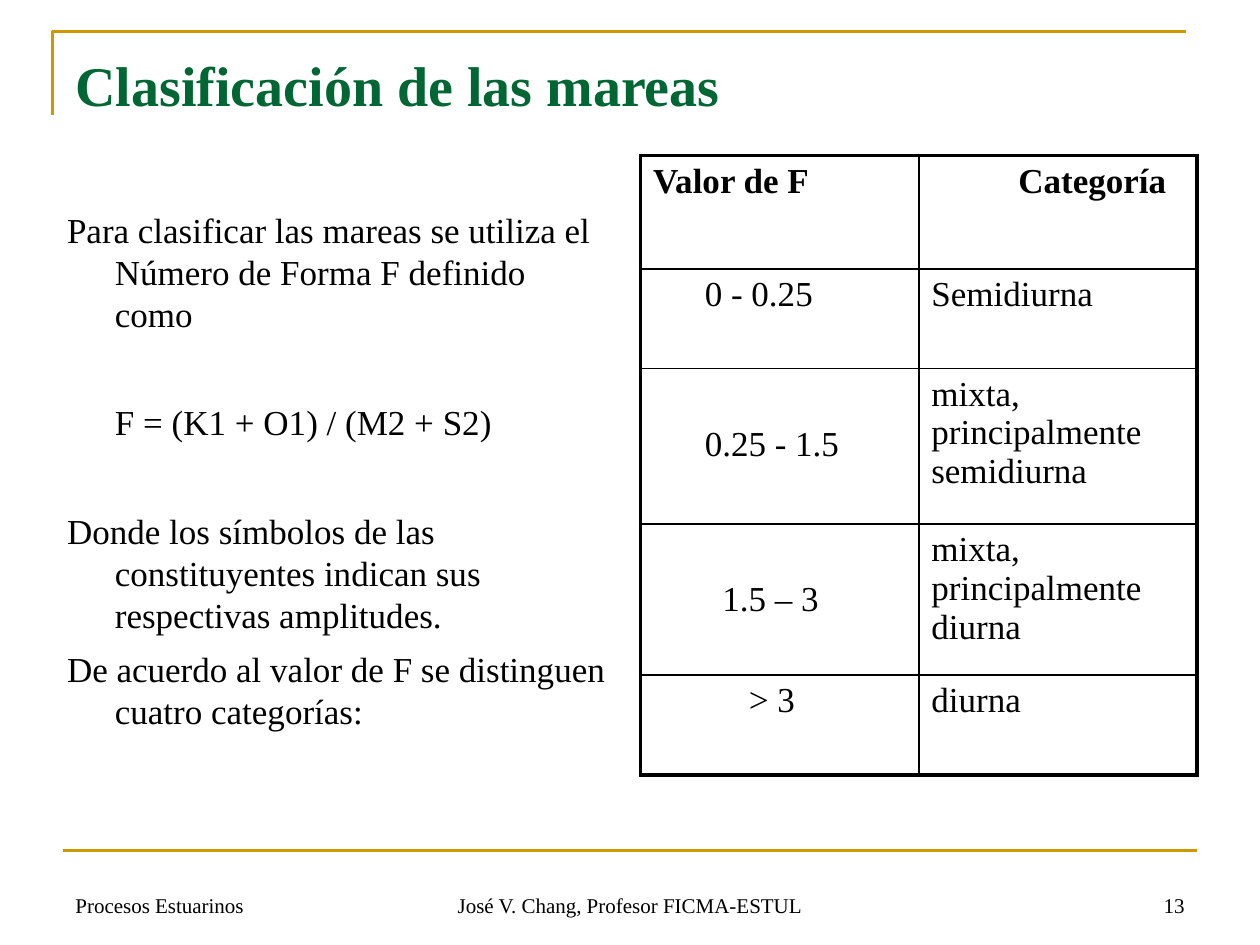
import pptx
import pptx.dml.color
import pptx.enum.shapes
import pptx.enum.text
import pptx.oxml.ns
import pptx.util
from lxml import etree

COLUMNS, ROWS = 120, 90
SLIDE_WIDTH, SLIDE_HEIGHT = pptx.util.Inches(10), pptx.util.Inches(7.5)
FONT = "Times New Roman"
GOLD, GREEN, BLACK = "CC9900", "006633", "000000"
ALIGN = pptx.enum.text.PP_ALIGN
ANCHOR = pptx.enum.text.MSO_ANCHOR

# wording, points of space before
EXPLANATION = [
    ("Para clasificar las mareas se utiliza el Número de Forma F definido como", 0),
    ("\tF = (K1 + O1) / (M2 + S2)", 38),
    ("Donde los símbolos de las constituyentes indican sus respectivas amplitudes.", 38),
    ("De acuerdo al valor de F se distinguen cuatro categorías:", 7),
]
# row height, then (wording, indent in inches, top margin in inches) per cell
CATEGORIES = [
    (10.8, ("Valor de F", 0, 0.05), ("Categoría", 0.69, 0.05)),
    (9.5, ("0 - 0.25", 0.41, 0.05), ("Semidiurna", 0, 0.05)),
    (14.8, ("0.25 - 1.5", 0.41, 0.45), ("mixta, principalmente semidiurna", 0, 0.05)),
    (14.4, ("1.5 – 3", 0.55, 0.45), ("mixta, principalmente diurna", 0, 0.05)),
    (9.5, ("> 3", 0.76, 0.05), ("diurna", 0, 0.05)),
]
# left column, width, alignment, wording
FOOTERS = [
    (6, 28, ALIGN.LEFT, "Procesos Estuarinos"),
    (41, 38, ALIGN.CENTER, "José V. Chang, Profesor FICMA-ESTUL"),
    (86, 28, ALIGN.RIGHT, "13"),
]


def across(columns):
    return round(SLIDE_WIDTH * columns / COLUMNS)


def down(rows):
    return round(SLIDE_HEIGHT * rows / ROWS)


def color(value):
    return pptx.dml.color.RGBColor.from_string(value)


def add_run(paragraph, wording, size, ink=BLACK, bold=False):
    run = paragraph.add_run()
    run.text = wording
    run.font.name, run.font.size, run.font.bold = FONT, pptx.util.Pt(size), bold
    run.font.color.rgb = color(ink)


def set_indent(paragraph, left, first=0):
    properties = paragraph._p.get_or_add_pPr()
    properties.set("marL", str(pptx.util.Inches(left)))
    properties.set("indent", str(pptx.util.Inches(first)))


def add_text_frame(slide, left, top, width, height, anchor=ANCHOR.TOP):
    """Place a wrapping text box on the grid and return its text frame."""
    box = slide.shapes.add_textbox(across(left), down(top), across(width), down(height))
    frame = box.text_frame
    frame.word_wrap, frame.vertical_anchor = True, anchor
    return frame


def draw_rules(slide):
    builder = slide.shapes.build_freeform(across(5), down(11))
    builder.add_line_segments(
        [(across(5), down(3)), (across(113), down(3))], close=False)
    corner = builder.convert_to_shape()
    corner.fill.background()
    corner.shadow.inherit = False
    footer_rule = slide.shapes.add_connector(
        pptx.enum.shapes.MSO_CONNECTOR.STRAIGHT,
        across(6), down(81), across(114), down(81))
    etree.SubElement(footer_rule._element.spPr, pptx.oxml.ns.qn("a:effectLst"))
    for rule in (corner, footer_rule):
        rule.line.color.rgb = color(GOLD)
        rule.line.width = pptx.util.Pt(1.5)


def add_title(slide):
    frame = add_text_frame(slide, 6, 3.6, 108, 15)
    frame.margin_top = pptx.util.Inches(0.1)
    add_run(frame.paragraphs[0], "Clasificación de las mareas", 32, GREEN, True)


def add_explanation(slide):
    frame = add_text_frame(slide, 5.2, 14.8, 53.9, 62.9)
    frame.margin_top = pptx.util.Inches(0.42)
    for number, (wording, space) in enumerate(EXPLANATION):
        paragraph = frame.add_paragraph() if number else frame.paragraphs[0]
        set_indent(paragraph, 0.38, -0.38)
        paragraph.line_spacing = pptx.util.Pt(24)
        paragraph.space_before = pptx.util.Pt(space)
        add_run(paragraph, wording, 20)


def set_border(cell, side, width):
    properties = cell._tc.get_or_add_tcPr()
    border = etree.SubElement(
        properties, pptx.oxml.ns.qn(f"a:ln{side}"), w=str(pptx.util.Pt(width)))
    fill = etree.SubElement(border, pptx.oxml.ns.qn("a:solidFill"))
    etree.SubElement(fill, pptx.oxml.ns.qn("a:srgbClr"), val=BLACK)


def add_categories(slide):
    height = sum(row[0] for row in CATEGORIES)
    table = slide.shapes.add_table(
        len(CATEGORIES), 2, across(61), down(14.8), across(53), down(height)).table
    table.first_row = table.horz_banding = False
    last = len(CATEGORIES) - 1
    for row, (row_height, *entries) in enumerate(CATEGORIES):
        table.rows[row].height = down(row_height)
        for column, (wording, indent, top_margin) in enumerate(entries):
            cell = table.cell(row, column)
            cell.margin_top = pptx.util.Inches(top_margin)
            outer_edges = {"L": column == 0, "R": column == 1,
                           "T": row == 0, "B": row == last}
            for side, is_outer in outer_edges.items():
                set_border(cell, side, 2.25 if is_outer else 1)
            cell.fill.background()
            paragraph = cell.text_frame.paragraphs[0]
            set_indent(paragraph, indent)
            add_run(paragraph, wording, 20, bold=row == 0)


def add_footers(slide):
    for left, width, alignment, wording in FOOTERS:
        frame = add_text_frame(slide, left, 82, width, 6, ANCHOR.BOTTOM)
        frame.paragraphs[0].alignment = alignment
        add_run(frame.paragraphs[0], wording, 12)


def main():
    deck = pptx.Presentation()
    deck.slide_width, deck.slide_height = SLIDE_WIDTH, SLIDE_HEIGHT
    slide = deck.slides.add_slide(deck.slide_layouts[6])
    draw_rules(slide)
    add_footers(slide)
    add_title(slide)
    add_explanation(slide)
    add_categories(slide)
    deck.save("out.pptx")


if __name__ == "__main__":
    main()
